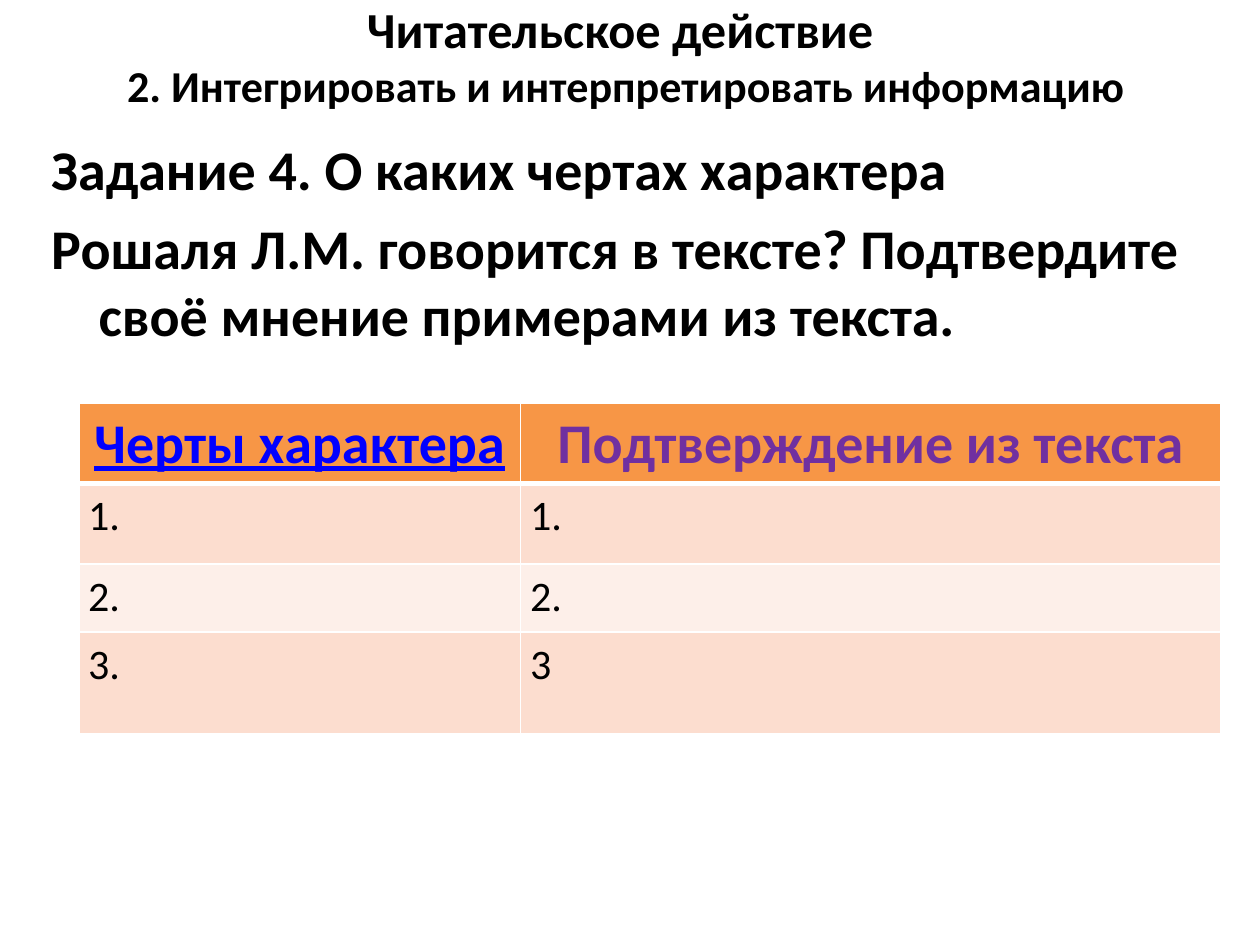
from lxml import etree
from pptx import Presentation
from pptx.dml.color import RGBColor
from pptx.enum.text import MSO_ANCHOR, PP_ALIGN
from pptx.oxml.ns import qn
from pptx.util import Pt

CENTER, JUSTIFY = PP_ALIGN.CENTER, PP_ALIGN.JUSTIFY
TOP, MIDDLE = MSO_ANCHOR.TOP, MSO_ANCHOR.MIDDLE
COLORS = {
    "text": "000000", "link": "0000FF", "purple": "7030A0",
    "header": "F79646", "odd": "FCDDCF", "even": "FDEFE9", "border": "FFFFFF",
}


class SlideBuilder:
    """Holds the font, the palette and the slide being filled."""

    def __init__(self, slide, font="Calibri"):
        self.s = slide
        self.font = font

    def color(self, name):
        return RGBColor.from_string(COLORS[name])

    def style(self, r, size, color="text", bold=True, underline=False):
        r.font.name = self.font
        r.font.size = Pt(size)
        r.font.bold = bold
        r.font.underline = underline
        r.font.color.rgb = self.color(color)

    def text_box(self, x, y, w, h, anchor):
        tf = self.s.shapes.add_textbox(Pt(x), Pt(y), Pt(w), Pt(h)).text_frame
        tf.word_wrap = True
        tf.vertical_anchor = anchor
        return tf

    def title(self, box, lines):
        """Centred title: one paragraph with a line break between the lines."""
        p = self.text_box(*box, MIDDLE).paragraphs[0]
        p.alignment = CENTER
        for i, (text, size) in enumerate(lines):
            if i:
                p.add_line_break()
            r = p.add_run()
            r.text = text
            self.style(r, size)

    def body(self, box, paragraphs, size=32, indent=27):
        """Paragraphs with a hanging indent."""
        tf = self.text_box(*box, TOP)
        tf.text = "\n".join(paragraphs)
        for p in tf.paragraphs:
            p.space_before = Pt(size * 0.2)
            pPr = p._p.get_or_add_pPr()
            pPr.set("marL", str(Pt(indent)))
            pPr.set("indent", str(Pt(-indent)))
            self.style(p.runs[0], size)

    def borders(self, cell, top, bottom):
        tcPr = cell._tc.get_or_add_tcPr()
        for side, width in (("L", 1), ("R", 1), ("T", top), ("B", bottom)):
            ln = etree.SubElement(tcPr, qn(f"a:ln{side}"), w=str(Pt(width)))
            fill = etree.SubElement(ln, qn("a:solidFill"))
            etree.SubElement(fill, qn("a:srgbClr"), val=COLORS["border"])

    def cell(self, cell, text, fill, top=1, bottom=1):
        self.borders(cell, top, bottom)
        cell.fill.solid()
        cell.fill.fore_color.rgb = self.color(fill)
        cell.text = text
        p = cell.text_frame.paragraphs[0]
        return p, p.runs[0]

    def header_cell(self, cell, text, color, underline):
        p, r = self.cell(cell, text, "header", bottom=3)
        p.alignment = CENTER
        self.style(r, 32, color, underline=underline)

    def body_cell(self, cell, text, row):
        p, r = self.cell(cell, text, "odd" if row % 2 else "even",
                         top=3 if row == 1 else 1)
        p.alignment = JUSTIFY
        p.line_spacing = 1.15
        cell.margin_left = cell.margin_right = Pt(5.4)
        cell.margin_top = cell.margin_bottom = 0
        self.style(r, 24, bold=False)

    def table(self, x, y, widths, heights, header, rows):
        table = self.s.shapes.add_table(
            len(heights), len(widths), Pt(x), Pt(y),
            Pt(sum(widths)), Pt(sum(heights))).table
        for column, width in zip(table.columns, widths):
            column.width = Pt(width)
        for row, height in zip(table.rows, heights):
            row.height = Pt(height)
        for j, content in enumerate(header):
            self.header_cell(table.cell(0, j), *content)
        for i, texts in enumerate(rows, 1):
            for j, text in enumerate(texts):
                self.body_cell(table.cell(i, j), text, i)


def main():
    prs = Presentation()
    prs.slide_width, prs.slide_height = Pt(720), Pt(540)
    b = SlideBuilder(prs.slides.add_slide(prs.slide_layouts[6]))
    b.title((33.75, 0, 648, 62.5), [
        ("Читательское действие ", 28.8),
        ("2. Интегрировать и интерпретировать информацию", 25.2),
    ])
    b.body((22.2, 73.5, 686, 405), [
        "Задание 4. О каких чертах характера",
        "Рошаля Л.М. говорится в тексте? Подтвердите своё мнение примерами из текста.",
    ])
    b.table(
        45, 230.6, widths=[252.5, 400], heights=[42, 46, 39, 58.2],
        header=[("Черты характера", "link", True),
                ("Подтверждение из текста", "purple", False)],
        rows=[("1.", "1. "), ("2.", "2."), ("3.", "3")])
    prs.save("out.pptx")


if __name__ == "__main__":
    main()
